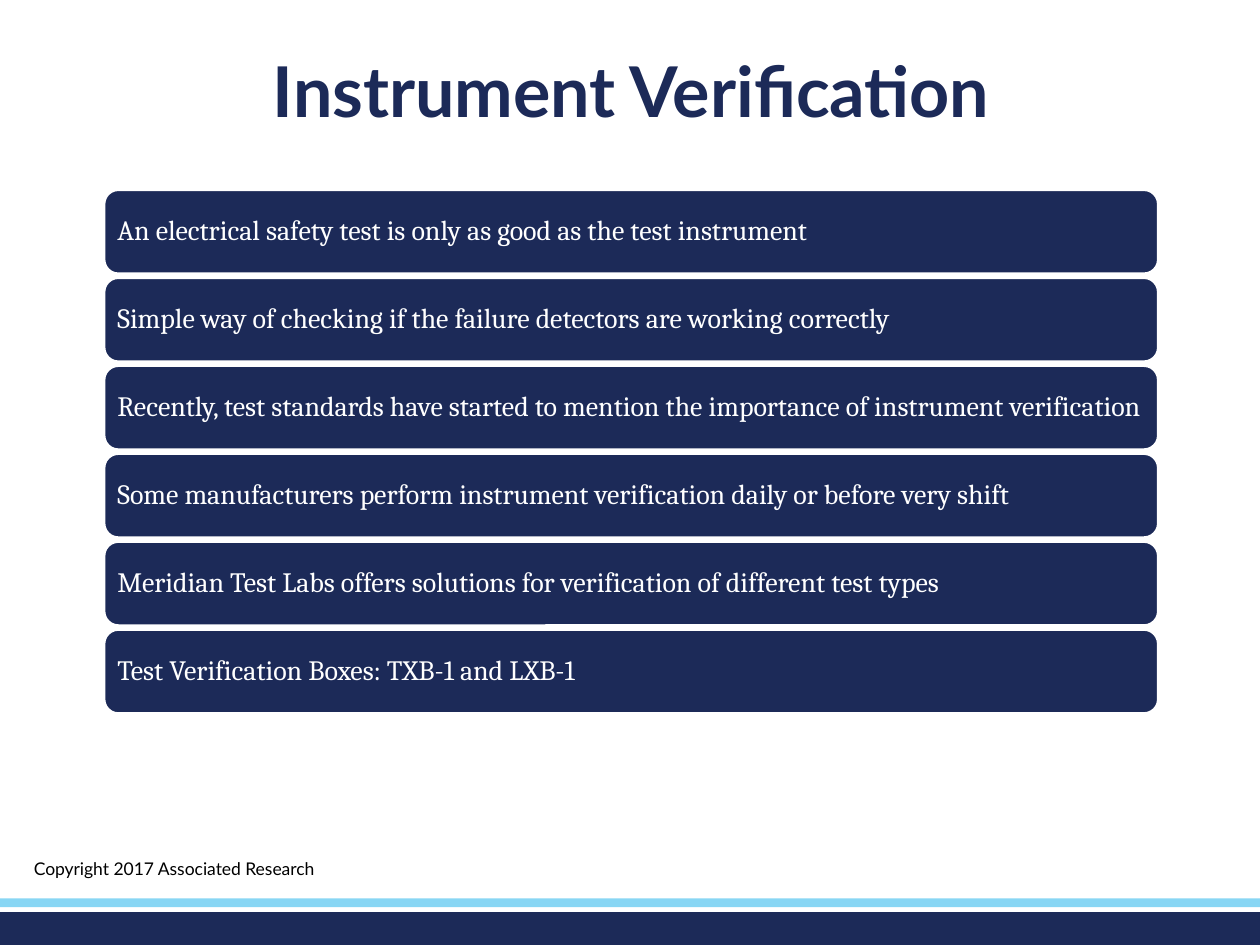
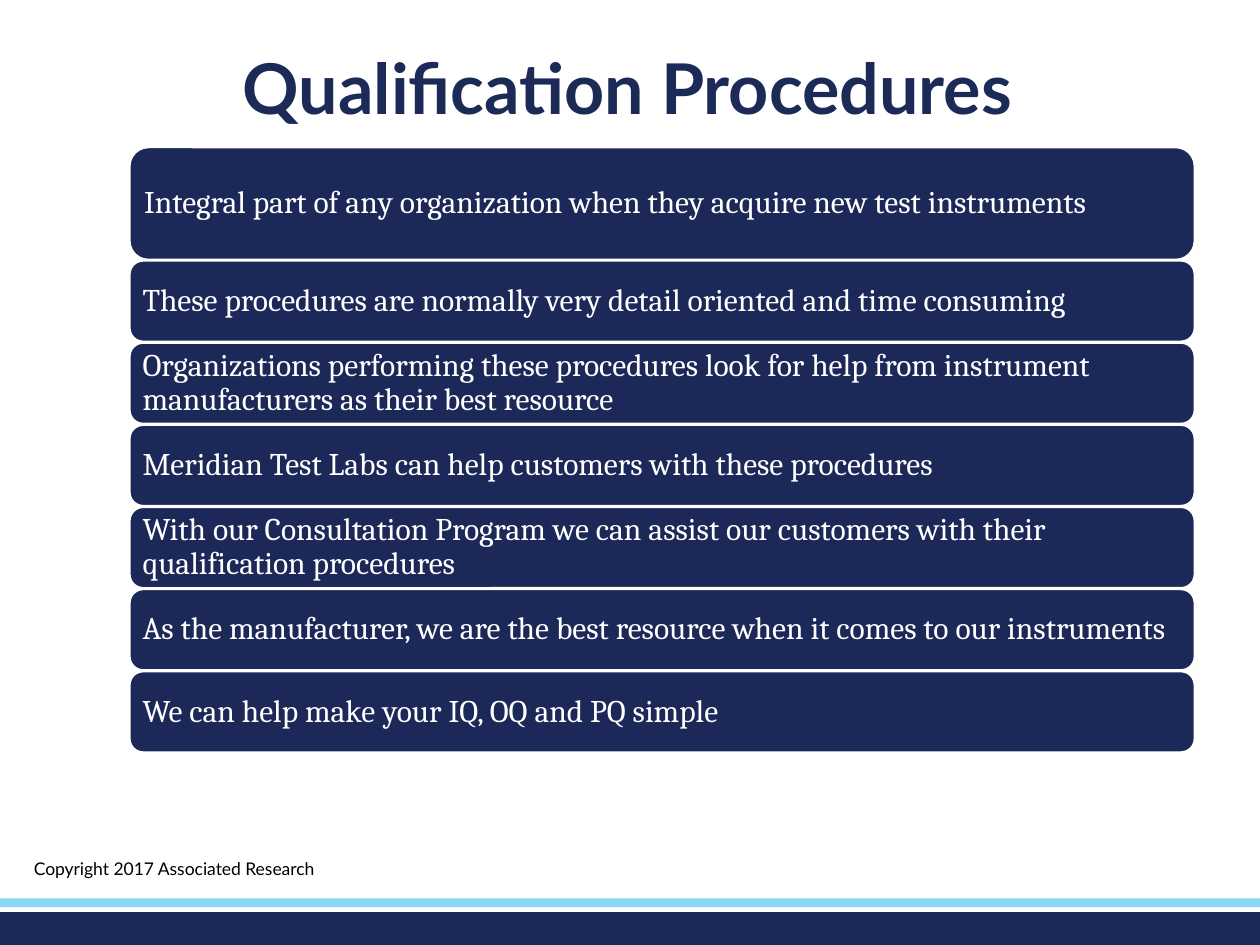
from pptx import Presentation
from pptx.dml.color import RGBColor
from pptx.enum import shapes, text
from pptx.util import Inches, Pt

COLORS = {"navy": "1C2A58", "bar": "1C2958", "sky": "88D6F4",
          "white": "FFFFFF", "black": "000000"}
HEAD, BODY = "Lato", "Cambria"
BANDS = [(7.24, 0.26, "navy"), (7.13, 0.07, "sky")]
CREDIT = "Copyright 2017 Associated Research"

CHECKS = [
    "An electrical safety test is only as good as the test instrument",
    "Simple way of checking if the failure detectors are working correctly",
    "Recently, test standards have started to mention the importance of instrument verification",
    "Some manufacturers perform instrument verification daily or before very shift",
    "Meridian Test Labs offers solutions for verification of different test types",
    "Test Verification Boxes: TXB-1 and LXB-1",
]
LEAD = "Integral part of any organization when they acquire new test instruments"
STEPS = [
    "These procedures are normally very detail oriented and time consuming",
    "Organizations performing these procedures look for help from instrument manufacturers as their best resource",
    "Meridian Test Labs can help customers with these procedures",
    "With our Consultation Program we can assist our customers with their qualification procedures",
    "As the manufacturer, we are the best resource when it comes to our instruments",
    "We can help make your IQ, OQ and PQ simple",
]


def color(name):
    return RGBColor.from_string(COLORS[name])


def write(frame, words, face, size, ink, bold=False):
    """Fill the first paragraph with one styled run and return the paragraph."""
    frame.word_wrap = True
    para = frame.paragraphs[0]
    run = para.add_run()
    run.text = words
    font = run.font
    font.name, font.size, font.bold = face, Pt(size), bold
    font.color.rgb = color(ink)
    return para


def add_block(slide, kind, box, fill):
    shape = slide.shapes.add_shape(kind, *map(Inches, box))
    shape.shadow.inherit = False
    shape.fill.solid()
    shape.fill.fore_color.rgb = color(fill)
    shape.line.fill.background()
    return shape


def add_bar(slide, box, words, size, fill):
    bar = add_block(slide, shapes.MSO_SHAPE.ROUNDED_RECTANGLE, box, fill)
    bar.line.color.rgb = color("white")
    bar.line.width = Pt(1)
    frame = bar.text_frame
    frame.margin_left = frame.margin_right = Inches(0.07)
    frame.margin_top = frame.margin_bottom = Inches(0.07)
    frame.vertical_anchor = text.MSO_ANCHOR.MIDDLE
    para = write(frame, words, BODY, size, "white")
    para.alignment = text.PP_ALIGN.LEFT
    para.line_spacing = 0.9


def add_stack(slide, left, width, height, first, last, lines, size, fill):
    """Spread equal bars evenly from the first top to the last top."""
    pitch = (last - first) / (len(lines) - 1)
    for i, words in enumerate(lines):
        add_bar(slide, (left, first + i * pitch, width, height), words, size, fill)


def add_title(slide, box, words):
    title = slide.shapes.title
    title.left, title.top, title.width, title.height = map(Inches, box)
    frame = title.text_frame
    frame.auto_size = text.MSO_AUTO_SIZE.NONE
    frame.vertical_anchor = text.MSO_ANCHOR.TOP
    para = write(frame, words, HEAD, 40, "navy", bold=True)
    para.alignment = text.PP_ALIGN.CENTER
    para.line_spacing = 0.9


def add_slide(prs, box, words):
    """Start a slide with its title, bottom bands and copyright line."""
    slide = prs.slides.add_slide(prs.slide_layouts[5])
    for top, height, fill in BANDS:
        add_block(slide, shapes.MSO_SHAPE.RECTANGLE, (0, top, 10, height), fill)
    add_title(slide, box, words)
    note = slide.shapes.add_textbox(*map(Inches, (0.17, 6.76, 3.17, 0.4)))
    write(note.text_frame, CREDIT, HEAD, 10, "black")
    return slide


def main():
    prs = Presentation()
    prs.slide_width, prs.slide_height = Inches(10), Inches(7.5)

    slide = add_slide(prs, (0.01, 0.4, 10, 0.92), "Instrument Verification")
    add_stack(slide, 0.83, 8.36, 0.66, 1.51, 5, CHECKS, 16, "navy")

    slide = add_slide(prs, (0.48, 0.38, 9, 0.94), "Qualification Procedures")
    add_bar(slide, (1.03, 1.17, 8.45, 0.89), LEAD, 18, "bar")
    add_stack(slide, 1.03, 8.45, 0.64, 2.07, 5.33, STEPS, 18, "bar")

    prs.save("out.pptx")


if __name__ == "__main__":
    main()
